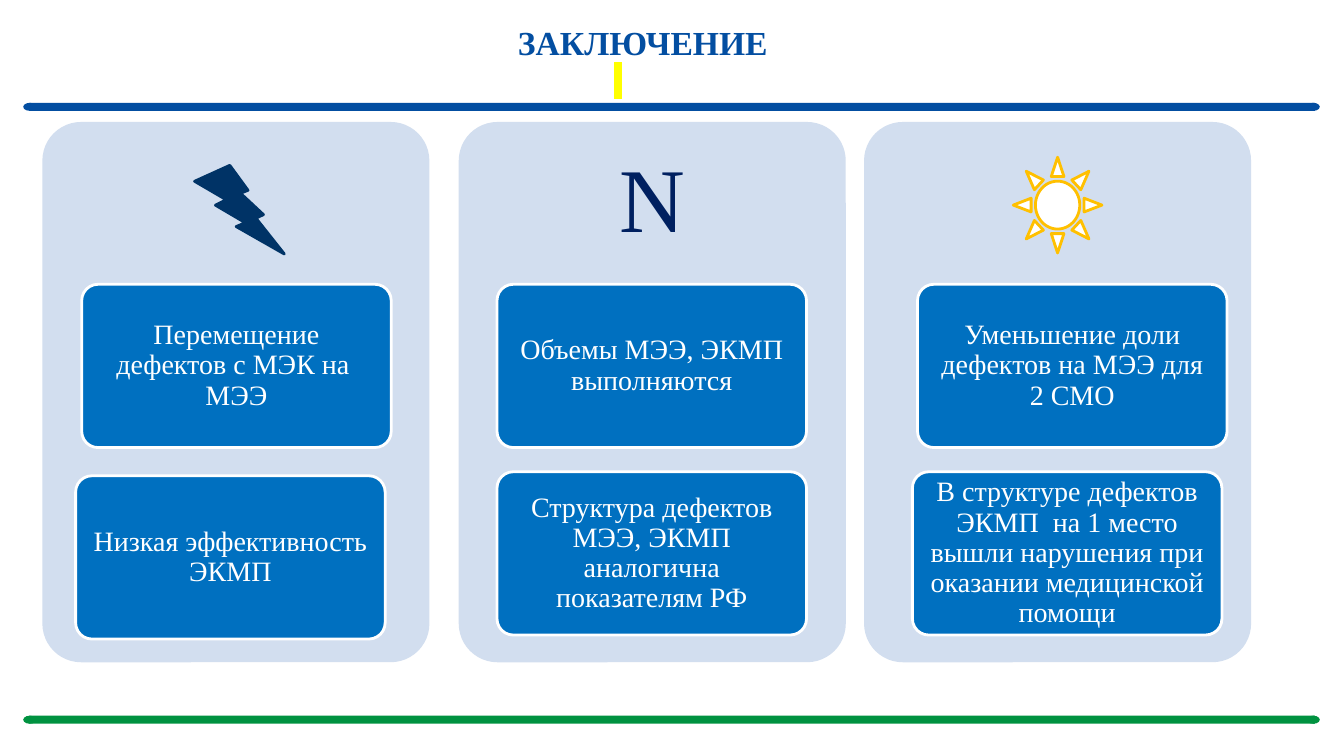
"""Build the closing slide: three cards of findings between two rules."""
from lxml import etree
from pptx import Presentation
from pptx.dml.color import RGBColor
from pptx.enum.shapes import MSO_SHAPE
from pptx.enum.text import MSO_ANCHOR, PP_ALIGN
from pptx.oxml.ns import qn
from pptx.util import Inches, Pt

RECT, OVAL = MSO_SHAPE.RECTANGLE, MSO_SHAPE.OVAL
ROUND = MSO_SHAPE.ROUNDED_RECTANGLE
BOLT, SUN = MSO_SHAPE.LIGHTNING_BOLT, MSO_SHAPE.SUN
MIDDLE, BOTTOM = MSO_ANCHOR.MIDDLE, MSO_ANCHOR.BOTTOM
CENTER = PP_ALIGN.CENTER
FONT = "Times New Roman"
HEX = {"blue": "034EA1", "green": "009240", "card": "D2DEEF",
       "box": "0070C0", "white": "FFFFFF", "navy": "002060",
       "bolt": "003366", "gold": "FFC000", "mark": "FFFF00"}

deck = Presentation()
deck.slide_width, deck.slide_height = Inches(13.33), Inches(7.5)
slide = deck.slides.add_slide(deck.slide_layouts[6])
wide, high = deck.slide_width / 100, deck.slide_height / 100


def draw(kind, x, y, w, h, fill, line=None):
    """Add a filled shape, placed in percent of the slide."""
    shape = slide.shapes.add_shape(kind, int(x * wide), int(y * high),
                                   int(w * wide), int(h * high))
    shape.shadow.inherit = False
    shape.fill.solid()
    shape.fill.fore_color.rgb = RGBColor.from_string(HEX[fill])
    if line:
        shape.line.color.rgb = RGBColor.from_string(HEX[line])
        shape.line.width = Pt(2)
    else:
        shape.line.fill.background()
    if kind == ROUND:
        shape.adjustments[0] = 0.1
    return shape


def write(shape, text, size, color, anchor=MIDDLE, side=0.11, foot=0.09):
    """Put one centred run in a shape and return its paragraph."""
    frame = shape.text_frame
    frame.word_wrap = True
    frame.vertical_anchor = anchor
    frame.margin_left = frame.margin_right = Inches(side)
    frame.margin_top, frame.margin_bottom = Inches(0.09), Inches(foot)
    para = frame.paragraphs[0]
    para.alignment, para.line_spacing = CENTER, 0.9
    run = para.add_run()
    run.text = text
    run.font.name, run.font.size = FONT, Pt(size)
    run.font.color.rgb = RGBColor.from_string(HEX[color])
    return para


for y, color in ((13.6, "blue"), (94.67, "green")):
    draw(RECT, 2.18, y, 95.65, 1.07, color)
    for x in (1.73, 97.22):
        draw(OVAL, x, y, 0.98, 1.07, color)

title = slide.shapes.add_textbox(int(3.68 * wide), int(1.73 * high),
                                 int(84.62 * wide), int(17.33 * high))
para = write(title, "ЗАКЛЮЧЕНИЕ", 24, "blue", BOTTOM, 0.1, 0.45)
para.runs[0].font.bold = True
props = para._p.get_or_add_pPr()
props.set("marL", "0")
props.set("indent", str(Inches(0.49)))
para.add_line_break()
mark = para.add_run()
mark.text = " "
mark.font.size, mark.font.bold = Pt(24), True
mark.font.color.rgb = RGBColor.from_string(HEX["blue"])
light = etree.SubElement(mark.font._element, qn("a:highlight"))
etree.SubElement(light, qn("a:srgbClr")).set("val", HEX["mark"])
mark.font.name = FONT

cards = (
    (3.15, ((6.08, 37.6, "Перемещение дефектов с МЭК на  МЭЭ"),
            (5.63, 62.93, "Низкая эффективность ЭКМП"))),
    (34.13, ((36.98, 37.6, "Объемы МЭЭ, ЭКМП выполняются"),
             (36.98, 62.4, "Структура дефектов МЭЭ, ЭКМП аналогична "
                           "показателям РФ"))),
    (64.29, ((68.27, 37.6, "Уменьшение доли дефектов на МЭЭ для 2 СМО"),
             (67.89, 62.4, "В структуре дефектов ЭКМП  на 1 место вышли "
                           "нарушения при оказании медицинской помощи"))),
)
for left, boxes in cards:
    draw(ROUND, left, 16.13, 28.8, 71.47, "card")
    for x, y, text in boxes:
        box = draw(ROUND, x, y, 23.03, 21.6, "box", "white")
        write(box, text, 20, "white")

sign = slide.shapes.add_textbox(int(34.13 * wide), int(16.13 * high),
                                int(28.8 * wide), int(21.47 * high))
write(sign, "N", 65, "navy")
draw(BOLT, 14.48, 21.87, 6.68, 11.73, "bolt", "bolt")
draw(SUN, 75.39, 20.8, 6.6, 12.67, "white", "gold")

deck.save("out.pptx")
